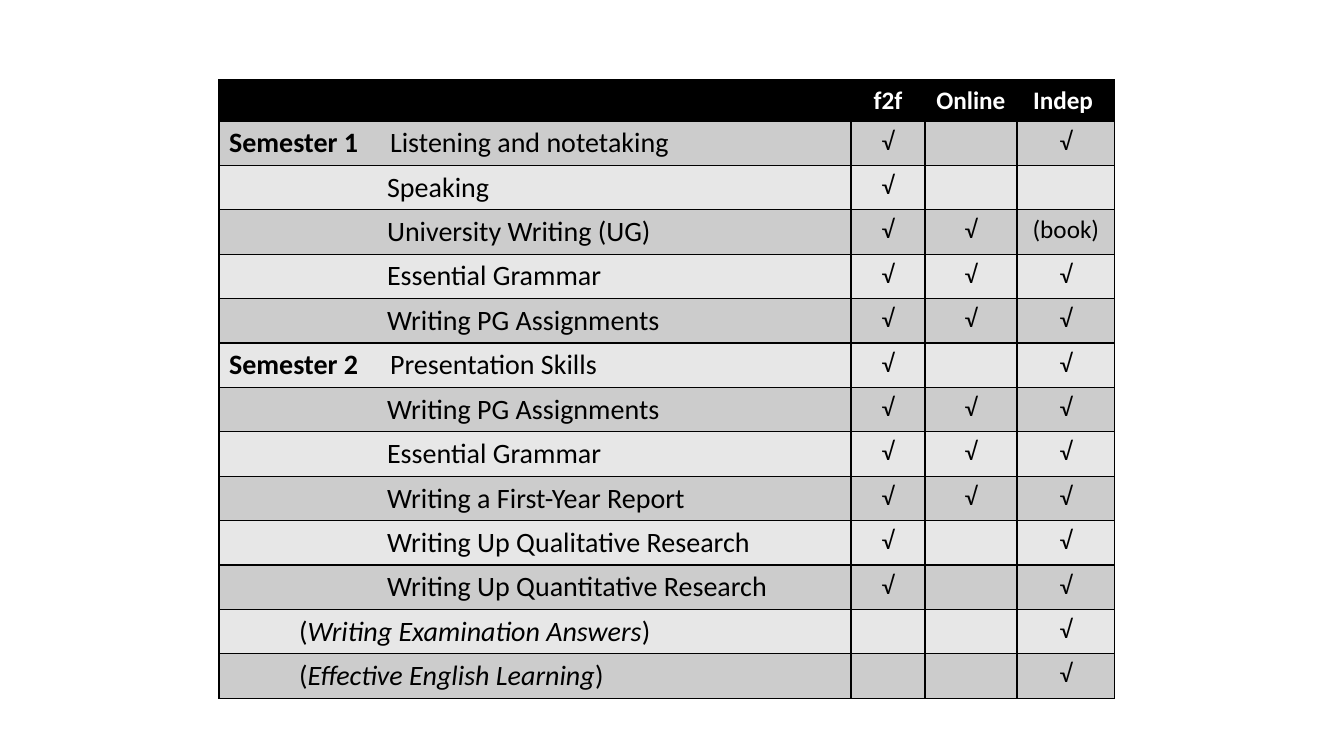
from lxml.etree import SubElement
from pptx import Presentation
from pptx.dml.color import RGBColor
from pptx.enum.text import PP_ALIGN
from pptx.oxml.ns import qn
from pptx.util import Emu, Pt

SCALE = 12192000 / 1344
COLOURS = {"black": "000000", "white": "FFFFFF", "odd": "CCCCCC", "even": "E7E7E7"}
COLUMN_WIDTHS = [632, 74, 92, 98]
HEADER_HEIGHT, ROW_HEIGHT = 41, 44
COURSE_INDENT, OPTION_INDENT, SEMESTER_TAB = 158, 70, 161
HEADINGS = ["", "f2f", "Online ", "Indep "]
TICK = "√"
COURSES = [
    ("Semester 1", "Listening and notetaking", [TICK, "", TICK]),
    ("", "Speaking", [TICK, "", ""]),
    ("", "University Writing (UG)", [TICK, TICK, "(book)"]),
    ("", "Essential Grammar", [TICK, TICK, TICK]),
    ("", "Writing PG Assignments", [TICK, TICK, TICK]),
    ("Semester 2", "Presentation Skills", [TICK, "", TICK]),
    ("", "Writing PG Assignments", [TICK, TICK, TICK]),
    ("", "Essential Grammar", [TICK, TICK, TICK]),
    ("", "Writing a First-Year Report", [TICK, TICK, TICK]),
    ("", "Writing Up Qualitative Research", [TICK, "", TICK]),
    ("", "Writing Up Quantitative Research", [TICK, "", TICK]),
]
OPTIONS = ["Writing Examination Answers", "Effective English Learning"]


def px(length):
    """Turn px into EMU."""
    return Emu(round(length * SCALE))


class SlideBuilder:
    """Hold the style and the current slide."""

    def __init__(self, slide, font="Calibri"):
        """Keep the slide and its font."""
        self.slide = slide
        self.font = font

    def table(self, left, top, widths, heights):
        """Add an empty table with the given column widths and row heights."""
        shape = self.slide.shapes.add_table(
            len(heights), len(widths), px(left), px(top), px(sum(widths)), px(sum(heights))
        )
        for column, width in zip(shape.table.columns, widths):
            column.width = px(width)
        for row, height in zip(shape.table.rows, heights):
            row.height = px(height)
        return shape.table

    def cell(self, cell, fill):
        """Give a cell black borders and a fill, and return its paragraph."""
        properties = cell._tc.get_or_add_tcPr()
        for side in ("a:lnL", "a:lnR", "a:lnT", "a:lnB"):
            line = SubElement(properties, qn(side), w=str(Pt(1)))
            solid = SubElement(line, qn("a:solidFill"))
            SubElement(solid, qn("a:srgbClr"), val=COLOURS["black"])
        cell.fill.solid()
        cell.fill.fore_color.rgb = RGBColor.from_string(COLOURS[fill])
        return cell.text_frame.paragraphs[0]

    def run(self, paragraph, text, size, colour="black", bold=False, italic=False):
        """Add one formatted run."""
        run = paragraph.add_run()
        run.text = text
        run.font.name = self.font
        run.font.size = Pt(size)
        run.font.bold = bold
        run.font.italic = italic
        run.font.color.rgb = RGBColor.from_string(COLOURS[colour])

    def centred(self, cell, text, fill, colour="black", bold=False):
        """Fill a cell with centred text, if there is any."""
        paragraph = self.cell(cell, fill)
        paragraph.alignment = PP_ALIGN.CENTER
        if text:
            self.run(paragraph, text, 18, colour, bold)

    def indent(self, paragraph, length):
        """Indent a paragraph from the left."""
        properties = paragraph._p.get_or_add_pPr()
        properties.set("marL", str(px(length)))
        properties.set("indent", "0")

    def tab(self, paragraph, position):
        """Set a left tab stop."""
        stops = SubElement(paragraph._p.get_or_add_pPr(), qn("a:tabLst"))
        SubElement(stops, qn("a:tab"), pos=str(px(position)), algn="l")

    def course(self, cell, semester, name, fill):
        """Write a course name, after its semester where one starts."""
        paragraph = self.cell(cell, fill)
        if semester:
            self.tab(paragraph, SEMESTER_TAB)
            self.run(paragraph, semester + "\t", 20, bold=True)
        else:
            self.indent(paragraph, COURSE_INDENT)
        self.run(paragraph, name, 20)

    def option(self, cell, name, fill):
        """Write an optional course in italics between brackets."""
        paragraph = self.cell(cell, fill)
        self.indent(paragraph, OPTION_INDENT)
        for text, italic in (("(", False), (name, True), (")", False)):
            self.run(paragraph, text, 20, italic=italic)


def main():
    """Build the course table slide."""
    presentation = Presentation()
    presentation.slide_width, presentation.slide_height = px(1344), px(756)
    builder = SlideBuilder(presentation.slides.add_slide(presentation.slide_layouts[6]))
    body_count = len(COURSES) + len(OPTIONS)
    heights = [HEADER_HEIGHT] + [ROW_HEIGHT] * body_count
    table = builder.table(219, 80, COLUMN_WIDTHS, heights)

    for column, heading in enumerate(HEADINGS):
        builder.centred(table.cell(0, column), heading, "black", "white", True)

    rows = COURSES + [(None, name, ["", "", TICK]) for name in OPTIONS]
    for index, (semester, name, modes) in enumerate(rows, start=1):
        fill = "odd" if index % 2 else "even"
        if semester is None:
            builder.option(table.cell(index, 0), name, fill)
        else:
            builder.course(table.cell(index, 0), semester, name, fill)
        for column, mode in enumerate(modes, start=1):
            builder.centred(table.cell(index, column), mode, fill)

    presentation.save("out.pptx")


if __name__ == "__main__":
    main()
